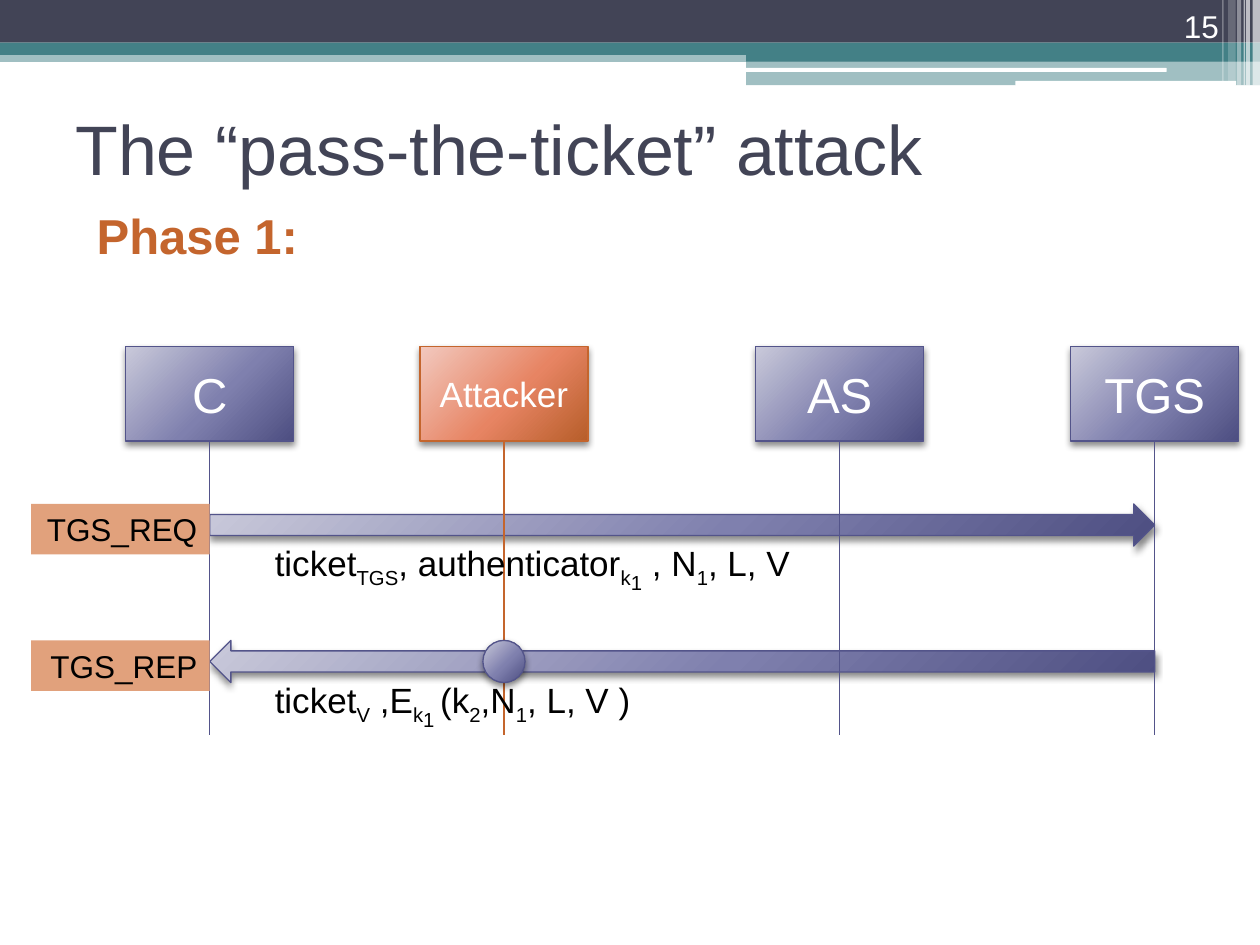
import lxml.etree
import pptx
import pptx.dml.color
import pptx.enum.shapes
import pptx.enum.text
import pptx.oxml
import pptx.oxml.ns
import pptx.util

Cm = pptx.util.Cm
Pt = pptx.util.Pt
RGBColor = pptx.dml.color.RGBColor
SHAPE = pptx.enum.shapes.MSO_SHAPE
ALIGN = pptx.enum.text.PP_ALIGN
ANCHOR = pptx.enum.text.MSO_ANCHOR
qn = pptx.oxml.ns.qn

FONT = "Arial"
WHITE = RGBColor(0xFF, 0xFF, 0xFF)
BLACK = RGBColor(0, 0, 0)
SLATE = RGBColor(0x42, 0x44, 0x56)
TEAL = RGBColor(0x43, 0x80, 0x86)
INDIGO = RGBColor(0x53, 0x54, 0x8A)
ORANGE = RGBColor(0xC4, 0x65, 0x2D)
PEACH = RGBColor(0xE1, 0xA1, 0x7C)
# Gradient stops belonging to each outline colour
GRADIENTS = {
    INDIGO: (RGBColor(0xC9, 0xC9, 0xDA), RGBColor(0x7F, 0x80, 0xAE),
             RGBColor(0x4D, 0x4E, 0x81)),
    ORANGE: (RGBColor(0xF2, 0xC9, 0xBF), RGBColor(0xE7, 0x84, 0x63),
             RGBColor(0xB7, 0x5E, 0x2A)),
}
NAMESPACE = pptx.oxml.ns.nsdecls("a")
SUB, DEEP = -25000, -40000  # subscript baselines


def write_text(shape, spans, size, color, align=ALIGN.LEFT,
               anchor=ANCHOR.TOP, bold=False, wrap=True):
    """Spans are (text, baseline) pairs of one paragraph."""
    frame = shape.text_frame
    frame.word_wrap = wrap
    frame.vertical_anchor = anchor
    para = frame.paragraphs[0]
    para.alignment = align
    para.font.name = FONT
    para.font.size = Pt(size)
    para.font.bold = bold
    para.font.color.rgb = color
    for text, baseline in spans:
        span = para.add_run()
        span.text = text
        if baseline:
            span._r.get_or_add_rPr().set("baseline", str(baseline))


def add_text(page, left, top, width, height, spans, size, color, **style):
    box = page.shapes.add_textbox(Cm(left), Cm(top), Cm(width), Cm(height))
    write_text(box, spans, size, color, **style)


def add_flat(page, kind, left, top, width, height, color, opacity=100):
    shape = page.shapes.add_shape(kind, Cm(left), Cm(top), Cm(width), Cm(height))
    shape.shadow.inherit = False
    shape.fill.solid()
    shape.fill.fore_color.rgb = color
    shape.line.fill.background()
    if opacity < 100:
        tint = shape._element.spPr.find(".//" + qn("a:srgbClr"))
        lxml.etree.SubElement(tint, qn("a:alpha"), val=str(opacity * 1000))
    return shape


def add_glossy(page, kind, left, top, width, height, color):
    """Shape with a radial gradient, thin outline and soft shadow."""
    shape = add_flat(page, kind, left, top, width, height, color)
    shape.line.color.rgb = color
    shape.line.width = Pt(0.75)
    stops = "".join(
        f'<a:gs pos="{position}"><a:srgbClr val="{stop}"/></a:gs>'
        for position, stop in zip((0, 55000, 100000), GRADIENTS[color]))
    gradient = pptx.oxml.parse_xml(
        f'<a:gradFill {NAMESPACE} rotWithShape="1"><a:gsLst>{stops}</a:gsLst>'
        '<a:path path="circle"><a:fillToRect l="-40000" t="-90000" '
        'r="140000" b="190000"/></a:path></a:gradFill>')
    properties = shape._element.spPr
    properties.replace(properties.find(qn("a:solidFill")), gradient)
    properties.find(qn("a:effectLst")).append(pptx.oxml.parse_xml(
        f'<a:outerShdw {NAMESPACE} blurRad="{Pt(4)}" dist="{Pt(2)}" '
        'dir="5400000" rotWithShape="0"><a:srgbClr val="000000">'
        '<a:alpha val="45000"/></a:srgbClr></a:outerShdw>'))
    return shape


def add_banner(page, width):
    # Full-width bands, then the step at the right
    step = 15.04
    for left, top, height, color, opacity in (
            (0, 1.02, 0.23, TEAL, 50), (0, 0, 0.86, SLATE, 100),
            (0, 0.86, 0.25, TEAL, 100), (step, 0.99, 0.25, TEAL, 100),
            (step, 1.22, 0.5, TEAL, 50)):
        add_flat(page, SHAPE.RECTANGLE, left, top, width - left, height, color, opacity)
    # White rules
    for left, top, length, height in ((15.01, 1.37, 8.51, 0.08),
                                      (20.47, 1.63, 4.45, 0.1)):
        add_flat(page, SHAPE.ROUNDED_RECTANGLE, left, top, length, height, WHITE)
    # Translucent stripes, given by their distance from the right edge
    for offset, stripe, height, opacity in (
            (0.15, 0.15, 1.73, 65), (0.28, 0.08, 1.73, 65),
            (0.33, 0.03, 1.73, 60), (0.46, 0.08, 1.73, 40),
            (0.64, 0.15, 1.63, 20), (0.76, 0.03, 1.63, 30)):
        add_flat(page, SHAPE.RECTANGLE, width - offset, 0, stripe, height, WHITE, opacity)


def add_headings(page):
    add_text(page, 1.27, 1.7, 22.86, 2.54, [("The “pass-the-ticket” attack", 0)],
             40, SLATE, anchor=ANCHOR.MIDDLE)
    add_text(page, 1.7, 4.01, 4.62, 1.45, [("Phase 1:", 0)], 28, ORANGE,
             bold=True, wrap=False)
    add_text(page, 22.71, 0, 2.11, 1.02, [("15", 0)], 18, WHITE,
             align=ALIGN.RIGHT, anchor=ANCHOR.BOTTOM)


def add_participant(page, center, top, name, size, color):
    width, height = 3.39, 1.9
    box = add_glossy(page, SHAPE.RECTANGLE, center - width / 2, top, width, height, color)
    write_text(box, [(name, 0)], size, WHITE, align=ALIGN.CENTER, anchor=ANCHOR.MIDDLE)
    return box


def add_lifeline(page, box, center, bottom, color):
    line = page.shapes.add_connector(
        pptx.enum.shapes.MSO_CONNECTOR.STRAIGHT,
        Cm(center), box.top + box.height, Cm(center), Cm(bottom))
    line.begin_connect(box, 2)
    line.line.color.rgb = color
    line.line.width = Pt(0.75)
    lxml.etree.SubElement(line._element.spPr, qn("a:effectLst"))


def add_message_text(page, left, top, name, spans):
    width = 3.6
    label = add_flat(page, SHAPE.RECTANGLE, left - width, top, width, 1.02, PEACH)
    write_text(label, [(name, 0)], 18, BLACK, align=ALIGN.RIGHT)
    add_text(page, left + 1.06, top + 0.64, 14.6, 1.12, spans, 20, BLACK)


def add_sequence(page, top, bottom):
    participants = (("C", 4.23, 28, INDIGO), ("Attacker", 10.16, 20, ORANGE),
                    ("AS", 16.93, 28, INDIGO), ("TGS", 23.28, 28, INDIGO))
    messages = (
        ("TGS_REQ", SHAPE.RIGHT_ARROW,
         [("ticket", 0), ("TGS", SUB), (", authenticator", 0), ("k", SUB),
          ("1", DEEP), (" , N", 0), ("1", SUB), (", L, V", 0)]),
        ("TGS_REP", SHAPE.LEFT_ARROW,
         [("ticket", 0), ("V", SUB), (" ,E", 0), ("k", SUB), ("1 ", DEEP),
          ("(k", 0), ("2", SUB), (",N", 0), ("1", SUB), (", L, V )", 0)]))
    client, attacker, server = (participants[index][1] for index in (0, 1, 3))
    thickness = 0.85
    arrow_tops = [top + 3.17 + 2.75 * index for index in range(len(messages))]

    boxes = [add_participant(page, center, top, name, size, color)
             for name, center, size, color in participants]
    for arrow_top, (name, arrow, spans) in zip(arrow_tops, messages):
        add_glossy(page, arrow, client, arrow_top, server - client, thickness, INDIGO)
    for box, (name, center, size, color) in zip(boxes, participants):
        add_lifeline(page, box, center, bottom, color)
    # Interception point on the reply
    add_glossy(page, SHAPE.OVAL, attacker - thickness / 2, arrow_tops[-1],
               thickness, thickness, INDIGO)
    for arrow_top, (name, arrow, spans) in zip(arrow_tops, messages):
        add_message_text(page, client, arrow_top, name, spans)


def main():
    deck = pptx.Presentation()
    deck.slide_width, deck.slide_height = Cm(25.4), Cm(19.05)
    page = deck.slides.add_slide(deck.slide_layouts[6])
    add_banner(page, 25.4)
    add_headings(page)
    add_sequence(page, 6.99, 14.82)
    deck.save("out.pptx")


if __name__ == "__main__":
    main()
